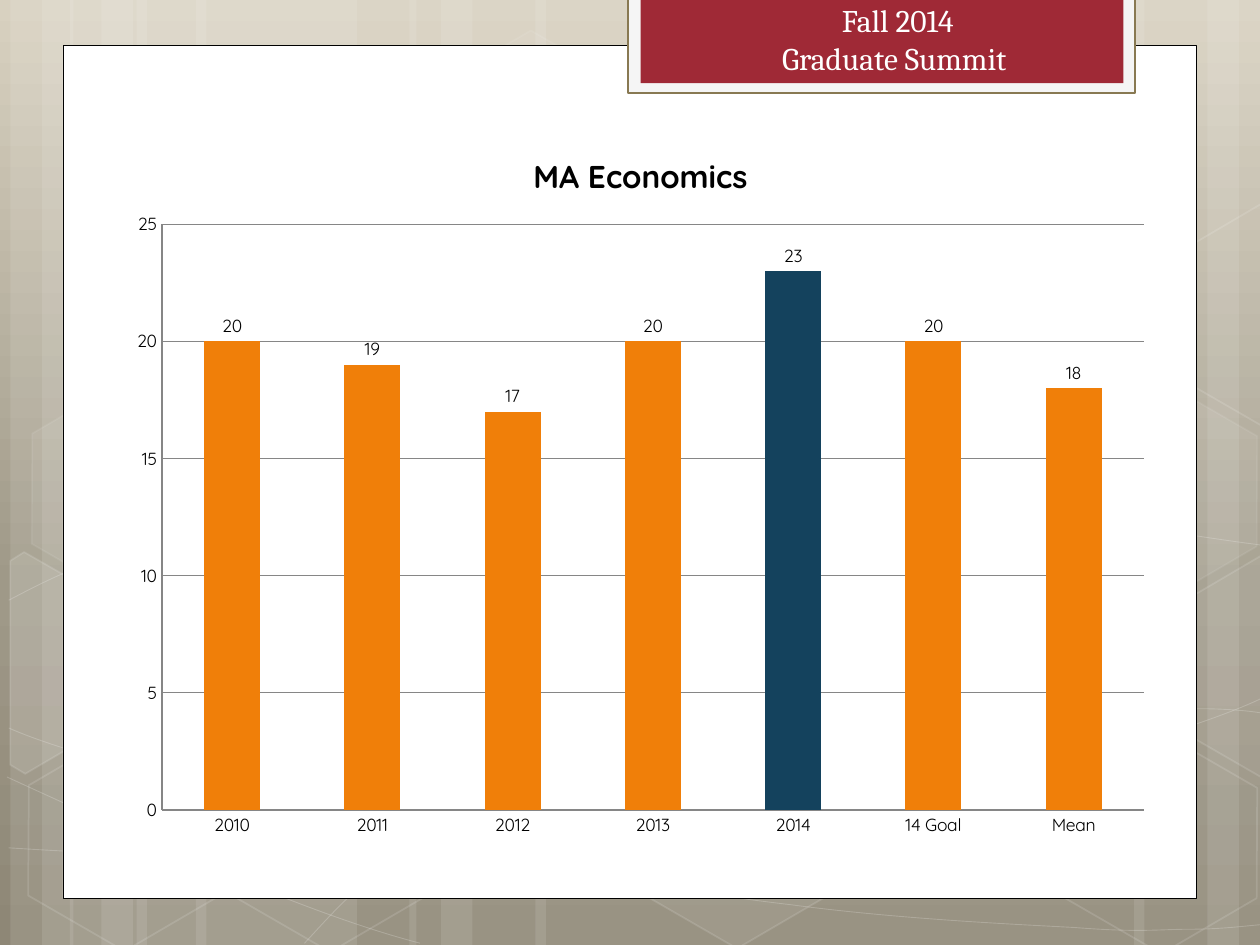
import copy
import math

import pptx
import pptx.chart.data
import pptx.dml.color
import pptx.enum.chart
import pptx.enum.shapes
import pptx.enum.text
import pptx.oxml
import pptx.oxml.ns
import pptx.util

Pt = pptx.util.Pt
qn = pptx.oxml.ns.qn
SHAPES = pptx.enum.shapes.MSO_SHAPE
WIDTH, HEIGHT = 720, 540
WHITE, BLACK, GREY = "FFFFFF", "000000", "868686"


def color(value):
    return pptx.dml.color.RGBColor.from_string(value)


def set_format(target, values):
    for name, value in values.items():
        setattr(target, name, value)


def element(tag, **attributes):
    node = pptx.oxml.parse_xml(f"<{tag} {pptx.oxml.ns.nsdecls(tag.split(':')[0])}/>")
    for name, value in attributes.items():
        node.set(name, str(value))
    return node


def set_alpha(fill_owner, percent):
    for node in fill_owner.iter(qn("a:srgbClr")):
        node.append(element("a:alpha", val=percent * 1000))


def turn(points, center, degrees):
    cosine, sine = math.cos(math.radians(degrees)), math.sin(math.radians(degrees))
    offsets = [(x - center[0], y - center[1]) for x, y in points]
    return [(center[0] + x * cosine - y * sine, center[1] + x * sine + y * cosine)
            for x, y in offsets]


class SlideBuilder:
    heading_font = "Cambria"
    body_font = "Quicksand"

    def __init__(self, slide):
        self.slide = slide

    def background(self, stops, angle):
        fill = self.slide.background.fill
        fill.gradient()
        fill.gradient_angle = angle
        stop_list = fill.gradient_stops[0]._gs.getparent()
        stop_list.insert(1, copy.deepcopy(stop_list[0]))
        for stop, (position, value) in zip(fill.gradient_stops, stops):
            stop.color.rgb = color(value)
            stop.position = position

    def paint(self, shape, fill=None, fill_alpha=100, line=None, width=1, line_alpha=100):
        shape.shadow.inherit = False
        if fill:
            shape.fill.solid()
            shape.fill.fore_color.rgb = color(fill)
            if fill_alpha < 100:
                set_alpha(shape.fill._xPr.find(qn("a:solidFill")), fill_alpha)
        else:
            shape.fill.background()
        if line:
            shape.line.color.rgb = color(line)
            shape.line.width = Pt(width)
            if line_alpha < 100:
                set_alpha(shape.line._ln, line_alpha)
        else:
            shape.line.fill.background()

    def shape(self, kind, box, rotation=0, **style):
        shape = self.slide.shapes.add_shape(kind, *map(Pt, box))
        shape.rotation = rotation
        self.paint(shape, **style)
        return shape

    def rectangle(self, box, **style):
        return self.shape(SHAPES.RECTANGLE, box, **style)

    def hexagon(self, left, top, **style):
        shape = self.shape(SHAPES.HEXAGON, (left, top, 126, 109.5), 30, **style)
        shape.adjustments[0] = 0.285

    def outline(self, points, close=False, **style):
        start, *rest = [(Pt(x), Pt(y)) for x, y in points]
        builder = self.slide.shapes.build_freeform(*start, scale=1.0)
        builder.add_line_segments(rest, close=close)
        shape = builder.convert_to_shape()
        self.paint(shape, **style)
        return shape

    def cut_hexagon(self, points, center, **style):
        self.outline(turn(points, center, -30), close=True, **style).rotation = 30

    def curve(self, points, **style):
        """Cubic curves: a start, then three points for each."""
        shape = self.outline(points, **style)
        segments = list(shape._element.iter(qn("a:lnTo")))
        for first in range(0, len(segments), 3):
            cubic = element("a:cubicBezTo")
            segments[first].addprevious(cubic)
            for segment in segments[first:first + 3]:
                cubic.append(segment[0])
                segment.getparent().remove(segment)

    def text(self, box, lines, size, value):
        frame = self.slide.shapes.add_textbox(*map(Pt, box)).text_frame
        frame.word_wrap = True
        for index, line in enumerate(lines):
            paragraph = frame.add_paragraph() if index else frame.paragraphs[0]
            paragraph.alignment = pptx.enum.text.PP_ALIGN.CENTER
            run = paragraph.add_run()
            run.text = line
            set_format(run.font, {"name": self.heading_font, "size": Pt(size)})
            run.font.color.rgb = color(value)

    def column_chart(self, box, plot_box, title, categories, values, fill, highlights):
        data = pptx.chart.data.CategoryChartData()
        data.categories = categories
        data.add_series("Series 1", values)
        kind = pptx.enum.chart.XL_CHART_TYPE.COLUMN_CLUSTERED
        chart = self.slide.shapes.add_chart(kind, *map(Pt, box), data).chart
        set_format(chart.font, {"name": self.body_font, "size": Pt(10)})
        chart.font.color.rgb = color(BLACK)
        chart.has_legend = False
        # Title
        chart.chart_title.text_frame.text = title
        paragraph = chart.chart_title.text_frame.paragraphs[0]
        for font in (paragraph.font, paragraph.runs[0].font):
            set_format(font, {"name": self.body_font, "size": Pt(18), "bold": True})
            font.color.rgb = color(BLACK)
        # Plot position
        plot_area = chart._chartSpace.find(".//" + qn("c:plotArea"))
        for old in plot_area.findall(qn("c:layout")):
            plot_area.remove(old)
        layout, manual = element("c:layout"), element("c:manualLayout")
        plot_area.insert(0, layout)
        layout.append(manual)
        settings = {"layoutTarget": "inner", "xMode": "edge", "yMode": "edge"}
        left, top, width, height = box
        x, y, w, h = plot_box
        settings.update(x=(x - left) / width, y=(y - top) / height, w=w / width, h=h / height)
        for name, value in settings.items():
            manual.append(element(f"c:{name}", val=value))
        # Axes
        no_tick = pptx.enum.chart.XL_TICK_MARK.NONE
        for axis in (chart.category_axis, chart.value_axis):
            set_format(axis, {"major_tick_mark": no_tick, "minor_tick_mark": no_tick})
            axis.format.line.color.rgb = color(GREY)
        set_format(chart.value_axis, {"minimum_scale": 0, "maximum_scale": 25,
                                      "major_unit": 5, "has_major_gridlines": True})
        chart.value_axis.major_gridlines.format.line.color.rgb = color(GREY)
        # Columns and labels
        plot = chart.plots[0]
        set_format(plot, {"gap_width": 150, "vary_by_categories": False, "has_data_labels": True})
        outside = pptx.enum.chart.XL_LABEL_POSITION.OUTSIDE_END
        set_format(plot.data_labels, {"show_value": True, "position": outside})
        series = plot.series[0]
        series.invert_if_negative = False
        parts = [(series, fill)] + [(series.points[i], c) for i, c in highlights.items()]
        for part, value in parts:
            part.format.fill.solid()
            part.format.fill.fore_color.rgb = color(value)


STRIPES = [(78, 126), (6, 36), (24, 60), (112, 126), (40, 36), (58, 60), (528, 126),
           (690, 36), (648, 60), (306, 222), (234, 36), (252, 60)]
CURVES = [
    [(5, 484.5), (44, 487), (83, 489), (137, 488), (191, 487), (258, 486), (330, 479),
     (402, 472), (504, 458), (570, 444), (636, 431), (703, 409), (725, 397)],
    [(5, 343), (26, 332), (47, 321), (87, 310), (128, 300), (186, 284), (250, 279),
     (314, 274), (392, 273), (471, 279), (550, 284), (682, 307), (725, 312)],
    [(4, 444), (91, 484), (178, 523), (240, 539)],
    [(5, 416), (23, 424), (50, 432), (92, 444), (134, 454), (197, 472), (257, 485),
     (317, 497), (392, 510), (452, 517), (512, 525), (576, 528), (614, 530),
     (652, 533), (662, 531), (680, 531), (699, 531), (712, 529), (725, 528)],
    [(174, 539), (187, 525), (200, 510), (217, 498), (235, 485), (259, 470), (279, 460),
     (300, 450), (312, 446), (338, 438), (364, 431), (413, 421), (438, 416),
     (464, 411), (467, 411), (490, 410), (512, 407), (547, 405), (572, 405),
     (597, 404), (638, 405), (638, 405), (654, 405), (670, 405), (686, 405),
     (699, 405), (711, 406), (718, 407), (724, 408), (722, 407), (724, 408)],
]
# Left, top, fill opacity (0 for none), line opacity
HEXAGONS = [(240.5, 26, 4, 8), (358, 424, 6, 12), (8, 425.5, 0, 12), (10, 224.5, 7, 8),
            (125.5, 426, 0, 12), (542, 326, 10, 12), (600.5, 427, 0, 12), (600.5, 226, 7, 8)]
LEFT_CUT = [(5.8, 320.4), (13.7, 315.4), (69.1, 347), (68.4, 410.4), (14.4, 442.1), (5.8, 437)]
RIGHT_CUT = [(666.7, 349.2), (720.7, 317.5), (726.5, 321.1), (726.5, 441.4),
             (721.4, 444.2), (666.7, 412.6)]


def main():
    presentation = pptx.Presentation()
    set_format(presentation, {"slide_width": Pt(WIDTH), "slide_height": Pt(HEIGHT)})
    builder = SlideBuilder(presentation.slides.add_slide(presentation.slide_layouts[6]))

    # Background pattern
    builder.background([(0, "D8D1C0"), (0.62, "9F9988"), (1, "8E8776")], 270)
    for left, width in STRIPES:
        builder.rectangle((left, 0, width, HEIGHT), fill=WHITE, fill_alpha=10)
    for points in CURVES:
        builder.curve(points, line=WHITE, width=0.5, line_alpha=20)
    for left, top, fill_alpha, line_alpha in HEXAGONS:
        builder.hexagon(left, top, fill=WHITE if fill_alpha else None,
                        fill_alpha=fill_alpha, line=WHITE, line_alpha=line_alpha)
    edge = {"line": WHITE, "line_alpha": 12}
    builder.cut_hexagon(LEFT_CUT, (25.9, 385.2), fill=WHITE, fill_alpha=10, **edge)
    builder.cut_hexagon(RIGHT_CUT, (709.2, 374.4), fill=WHITE, fill_alpha=4, **edge)
    builder.cut_hexagon([(x, y - 201) for x, y in RIGHT_CUT], (709.2, 173.4), **edge)

    # Panel and banner
    builder.rectangle((36, 26, 648, 487.2), fill=WHITE, line=BLACK, width=0.5)
    builder.rectangle((359, -1.5, 289.5, 54.5), fill="F5F5F5", line="887952", width=1.25)
    builder.rectangle((366, -1.5, 276, 49), fill="9F2936")
    builder.text((378, -3, 270, 51), ["Fall 2014", "Graduate Summit "], 18, WHITE)

    # Enrolment chart
    builder.column_chart((66, 72, 600, 414), (92.5, 128.2, 561.2, 334.7), "MA Economics",
                         ["2010", "2011", "2012", "2013", "2014", "14 Goal", "Mean"],
                         [20, 19, 17, 20, 23, 20, 18], "F07F09", {4: "14425D"})
    presentation.save("out.pptx")


if __name__ == "__main__":
    main()
